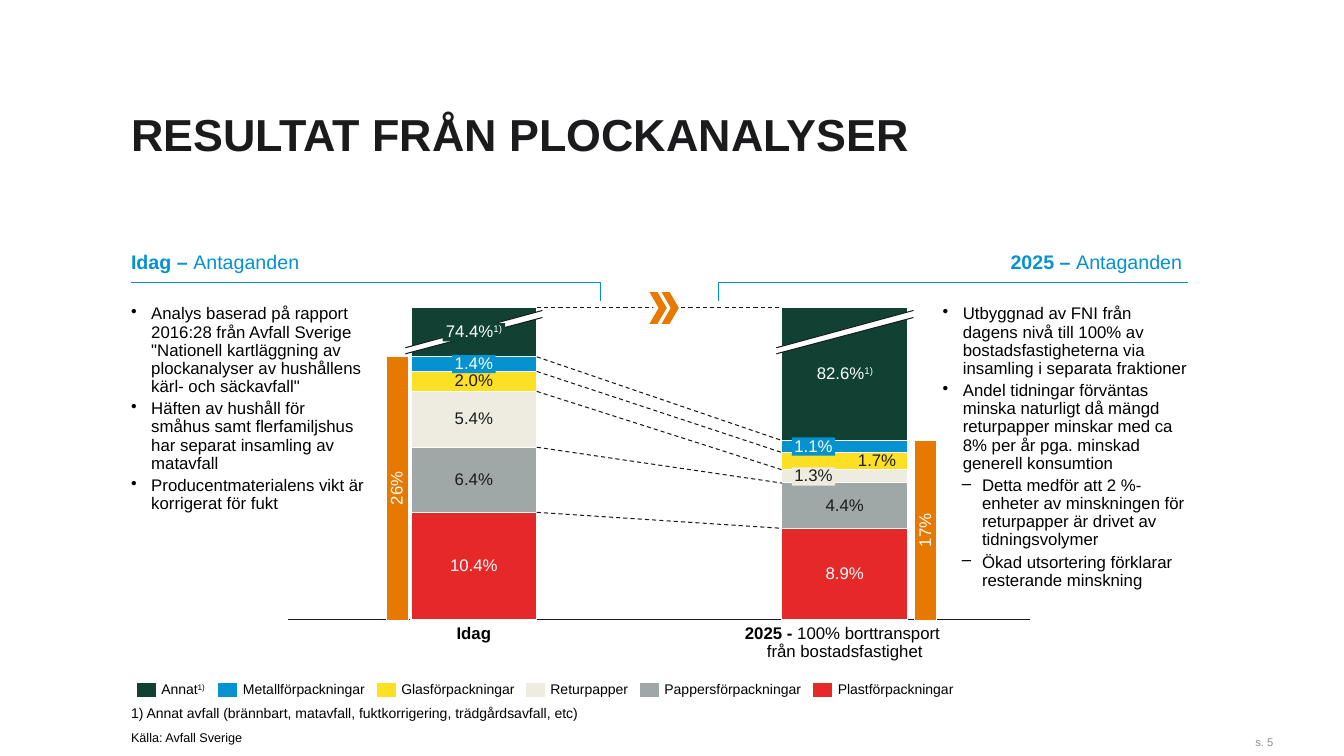
"""Build the slide on waste composition analyses, today versus 2025."""
from copy import deepcopy
from dataclasses import dataclass
from itertools import accumulate

from lxml.etree import SubElement
from pptx import Presentation
from pptx.chart.data import CategoryChartData
from pptx.dml.color import RGBColor
from pptx.enum.chart import XL_CHART_TYPE, XL_TICK_LABEL_POSITION, XL_TICK_MARK
from pptx.enum.dml import MSO_LINE
from pptx.enum.shapes import MSO_CONNECTOR, MSO_SHAPE
from pptx.enum.text import MSO_ANCHOR, MSO_AUTO_SIZE, PP_ALIGN
from pptx.oxml import parse_xml
from pptx.oxml.ns import nsdecls, qn
from pptx.util import Pt


@dataclass(frozen=True)
class Theme:
    font: str = "Arial"
    black: str = "000000"
    ink: str = "1B1B1D"
    grey: str = "8C8C8C"
    white: str = "FFFFFF"
    orange: str = "E77900"
    blue: str = "0492D0"
    green: str = "114132"
    yellow: str = "FDE023"
    cream: str = "EEECE1"
    silver: str = "9FA7A7"
    red: str = "E52828"
    title: int = 32
    heading: int = 14
    body: int = 12
    legend: int = 10
    source: int = 9
    page: int = 8
    line: float = 0.75


T = Theme()
PX = 9144
NOTE = ("1)", "sup")
TITLE = "RESULTAT FRÅN PLOCKANALYSER"
FRACTIONS = [
    ("Plastförpackningar", T.red, T.white, 806, 114),
    ("Pappersförpackningar", T.silver, T.ink, 634, 135),
    ("Returpapper", T.cream, T.ink, 521, 77),
    ("Glasförpackningar", T.yellow, T.ink, 373, 112),
    ("Metallförpackningar", T.blue, T.white, 216, 121),
    ("Annat", T.green, T.white, 135, 44),
]
BARS = {
    "Idag": [(81, ["10.4%"], 0, False), (49, ["6.4%"], 0, False), (42, ["5.4%"], 0, False),
             (15, ["2.0%"], 0, False), (11, ["1.4%"], 0, True), (37, ["74.4%", NOTE], 0, True)],
    "2025": [(69, ["8.9%"], 0, False), (34, ["4.4%"], 0, False), (10, ["1.3%"], -31, True),
             (13, ["1.7%"], 32, False), (9, ["1.1%"], -31, True), (100, ["82.6%", NOTE], 0, False)],
}
TOTALS = [("26%", 394), ("17%", 918)]
BAR_NAMES = [
    ((452, 620, 36, 18), [("Idag", "b")]),
    ((741, 620, 194, 36), [("2025 - ", "b"), "100% borttransport ", "\n", "från bostadsfastighet"]),
]
HEADINGS = [
    ((130, 251, 233, 21), [("Idag – ", "b"), "Antaganden"], PP_ALIGN.LEFT, (130, 596)),
    ((945, 251, 233, 21), [("2025 – ", "b"), "Antaganden "], PP_ALIGN.RIGHT, (1178, 713)),
]
TODAY = [
    ("•", 'Analys baserad på rapport 2016:28 från Avfall Sverige "Nationell kartläggning av '
          'plockanalyser av hushållens kärl- och säckavfall"'),
    ("•", "Häften av hushåll för småhus samt flerfamiljshus har separat insamling av matavfall"),
    ("•", "Producentmaterialens vikt är korrigerat för fukt"),
]
FUTURE = [
    ("•", "Utbyggnad av FNI från dagens nivå till 100% av bostadsfastigheterna via insamling i "
          "separata fraktioner"),
    ("•", "Andel tidningar förväntas minska naturligt då mängd returpapper minskar med ca 8% per år "
          "pga. minskad generell konsumtion"),
    ("–", "Detta medför att 2 %-enheter av minskningen för returpapper är drivet av tidningsvolymer"),
    ("–", "Ökad utsortering förklarar resterande minskning"),
]
FOOTNOTE = "1) Annat avfall (brännbart, matavfall, fuktkorrigering, trädgårdsavfall, etc)"
SOURCE = "Källa: Avfall Sverige"
CHART = (277, 296, 754, 328)
PLOT = {"x": 0.012, "y": 0.028, "w": 0.976, "h": 0.945}
GAP, SCALE_MAX = 195, 235


def rgb(color):
    return RGBColor.from_string(color)


def emu(box):
    return [round(v * PX) for v in box]


def paint(sp, fill=None, line=None):
    sp.shadow.inherit = False
    if fill:
        sp.fill.solid()
        sp.fill.fore_color.rgb = rgb(fill)
    else:
        sp.fill.background()
    if line:
        sp.line.color.rgb = rgb(line)
        sp.line.width = Pt(T.line)
    else:
        sp.line.fill.background()
    return sp


def block(shapes, box, fill, line=None, kind=MSO_SHAPE.RECTANGLE):
    return paint(shapes.add_shape(kind, *emu(box)), fill, line)


def outline(s, points, close, **colors):
    start, *rest = [emu(pt) for pt in points]
    fb = s.shapes.build_freeform(*start, scale=1.0)
    fb.add_line_segments(rest, close=close)
    return paint(fb.convert_to_shape(), **colors)


def rule(s, x1, y1, x2, y2, dash=None):
    cn = s.shapes.add_connector(MSO_CONNECTOR.STRAIGHT, *emu((x1, y1, x2, y2)))
    cn.line.color.rgb = rgb(T.ink)
    cn.line.width = Pt(T.line)
    if dash:
        cn.line.dash_style = dash
    SubElement(cn._element.spPr, qn("a:effectLst"))


def write(sp, paragraphs, size=T.body, color=T.black, align=PP_ALIGN.LEFT, anchor=MSO_ANCHOR.TOP,
          wrap=True, inset=(0, 0), spacing=0.9, bold=False, bullets=()):
    tf = sp.text_frame
    tf.auto_size, tf.word_wrap, tf.vertical_anchor = MSO_AUTO_SIZE.NONE, wrap, anchor
    tf.margin_left = tf.margin_right = inset[0] * PX
    tf.margin_top = tf.margin_bottom = inset[1] * PX
    for i, runs in enumerate(paragraphs):
        p = tf.add_paragraph() if i else tf.paragraphs[0]
        p.alignment, p.line_spacing = align, spacing
        if i:
            p.space_before = Pt(3)
        if bullets:
            p.level = int(bullets[i] == "–")
            pPr = p._p.get_or_add_pPr()
            pPr.set("marL", str((39 if p.level else 20) * PX))
            pPr.set("indent", str(-20 * PX))
            SubElement(pPr, qn("a:buChar")).set("char", bullets[i])
        for run in runs:
            if run == "\n":
                p.add_line_break()
                p._p[-1].append(deepcopy(r._r.rPr))
                continue
            text, style = (run, "") if isinstance(run, str) else run
            r = p.add_run()
            r.text = text
            r.font.name, r.font.size, r.font.color.rgb = T.font, Pt(size), rgb(color)
            r.font.bold = bold or style == "b"
            if style == "sup":
                r._r.get_or_add_rPr().set("baseline", "30000")


def label(s, box, runs, **fmt):
    write(s.shapes.add_textbox(*emu(box)), [runs], **fmt)


def add_bars(s):
    data = CategoryChartData()
    data.categories = list(BARS)
    for i, (name, *_) in enumerate(FRACTIONS):
        data.add_series(name, [bar[i][0] for bar in BARS.values()])
    chart = s.shapes.add_chart(XL_CHART_TYPE.COLUMN_STACKED, *emu(CHART), data).chart
    chart.has_legend = chart.has_title = False
    chart.font.name, chart.font.size, chart.font.color.rgb = T.font, Pt(T.legend), rgb(T.ink)
    plot = chart.plots[0]
    plot.gap_width, plot.overlap, plot.vary_by_categories = GAP, 100, False
    for series, (_, fill, *_) in zip(plot.series, FRACTIONS):
        series.format.fill.solid()
        series.format.fill.fore_color.rgb = rgb(fill)
        series.format.line.color.rgb = rgb(T.white)
        series.format.line.width = Pt(T.line)
    va, ca = chart.value_axis, chart.category_axis
    va.minimum_scale, va.maximum_scale = 0, SCALE_MAX
    va.has_major_gridlines = va.visible = False
    ca.tick_label_position = XL_TICK_LABEL_POSITION.NONE
    ca.major_tick_mark = ca.minor_tick_mark = XL_TICK_MARK.NONE
    ca.format.line.color.rgb = rgb(T.ink)
    ca.format.line.width = Pt(T.line)
    area = chart._chartSpace.chart.plotArea
    for old in area.findall(qn("c:layout")):
        area.remove(old)
    parts = '<c:layoutTarget val="inner"/><c:xMode val="edge"/><c:yMode val="edge"/>'
    parts += "".join(f'<c:{k} val="{v}"/>' for k, v in PLOT.items())
    area.insert(0, parse_xml(f'<c:layout {nsdecls("c")}><c:manualLayout>{parts}</c:manualLayout></c:layout>'))


def add_bar_details(s):
    left, top, width, height = CHART
    slot = width * PLOT["w"] / len(BARS)
    half = slot / (1 + GAP / 100) / 2
    centers = [left + width * PLOT["x"] + slot * (i + 0.5) for i in range(len(BARS))]
    unit = height * PLOT["h"] / SCALE_MAX
    base = top + height * (PLOT["y"] + PLOT["h"])
    levels = [[base - unit * v for v in accumulate(seg[0] for seg in bar)] for bar in BARS.values()]
    for cx in centers:
        x1, x2 = cx - 68, cx + 68
        outline(s, [(x1, 345), (x2, 308), (x2, 315), (x1, 351)], True, fill=T.white)
        rule(s, x1, 345, x2, 308)
        rule(s, x1, 351, x2, 315)
    for cx, tops, bar, (total, x) in zip(centers, levels, BARS.values(), TOTALS):
        for (value, runs, shift, filled), y, (_, fill, ink, *_) in zip(bar, tops, FRACTIONS):
            w = 9 * len(runs[0]) + 7 + 10 * (len(runs) - 1)
            box = (cx + shift - w / 2, y + unit * value / 2 - 9, w, 18)
            sp = block(s.shapes, box, fill) if filled else s.shapes.add_textbox(*emu(box))
            write(sp, [runs], color=ink, align=PP_ALIGN.CENTER, anchor=MSO_ANCHOR.MIDDLE,
                  wrap=False, inset=(3, 0))
        length = base - tops[-2]
        sp = block(s.shapes, (x - length / 2, base - length / 2 - 11, length, 22), T.orange, T.white)
        sp.rotation = 270
        write(sp, [[total]], color=T.white, align=PP_ALIGN.CENTER, anchor=MSO_ANCHOR.MIDDLE)
    for y1, y2 in zip(*levels):
        rule(s, centers[0] + half, y1, centers[1] - half, y2, MSO_LINE.DASH)


def main():
    prs = Presentation()
    prs.slide_width, prs.slide_height = emu((1333, 750))
    s = prs.slides.add_slide(prs.slide_layouts[5])
    title = s.shapes.title
    title.left, title.top, title.width, title.height = emu((130, 101, 1049, 63))
    write(title, [[TITLE]], size=T.title, color=T.ink, bold=True, spacing=1.0, anchor=MSO_ANCHOR.MIDDLE)
    add_bars(s)
    add_bar_details(s)
    for box, runs in BAR_NAMES:
        label(s, box, runs, align=PP_ALIGN.CENTER, wrap=False)
    for name, fill, _, x, w in FRACTIONS:
        block(s.shapes, (x, 677, 20, 15), fill, T.white)
        label(s, (x + 25, 677, w, 15), [name, NOTE] if name == "Annat" else [name],
              size=T.legend, anchor=MSO_ANCHOR.MIDDLE, wrap=False)
    arrow = s.shapes.add_group_shape().shapes
    block(arrow, (648, 291, 19, 29), T.white)
    for x in (643, 655):
        block(arrow, (x, 289, 19, 33), T.orange, T.white, MSO_SHAPE.CHEVRON)
    for box, runs, align, (outer, inner) in HEADINGS:
        label(s, box, runs, size=T.heading, color=T.blue, align=align)
        outline(s, [(outer, 280), (inner, 280), (inner, 299)], False, line=T.blue)
    for box, items in (((130, 303, 235, 208), TODAY), ((935, 303, 243, 285), FUTURE)):
        write(s.shapes.add_textbox(*emu(box)), [[text] for _, text in items],
              bullets=[mark for mark, _ in items])
    label(s, (130, 701, 933, 15), [FOOTNOTE], size=T.legend, anchor=MSO_ANCHOR.BOTTOM)
    label(s, (130, 725, 112, 14), [SOURCE], size=T.source, anchor=MSO_ANCHOR.BOTTOM, wrap=False)
    label(s, (1130, 721, 143, 30), ["s. 5"], size=T.page, color=T.grey, align=PP_ALIGN.RIGHT,
          anchor=MSO_ANCHOR.MIDDLE, inset=(10, 5), spacing=1.0)
    prs.save("out.pptx")


if __name__ == "__main__":
    main()
